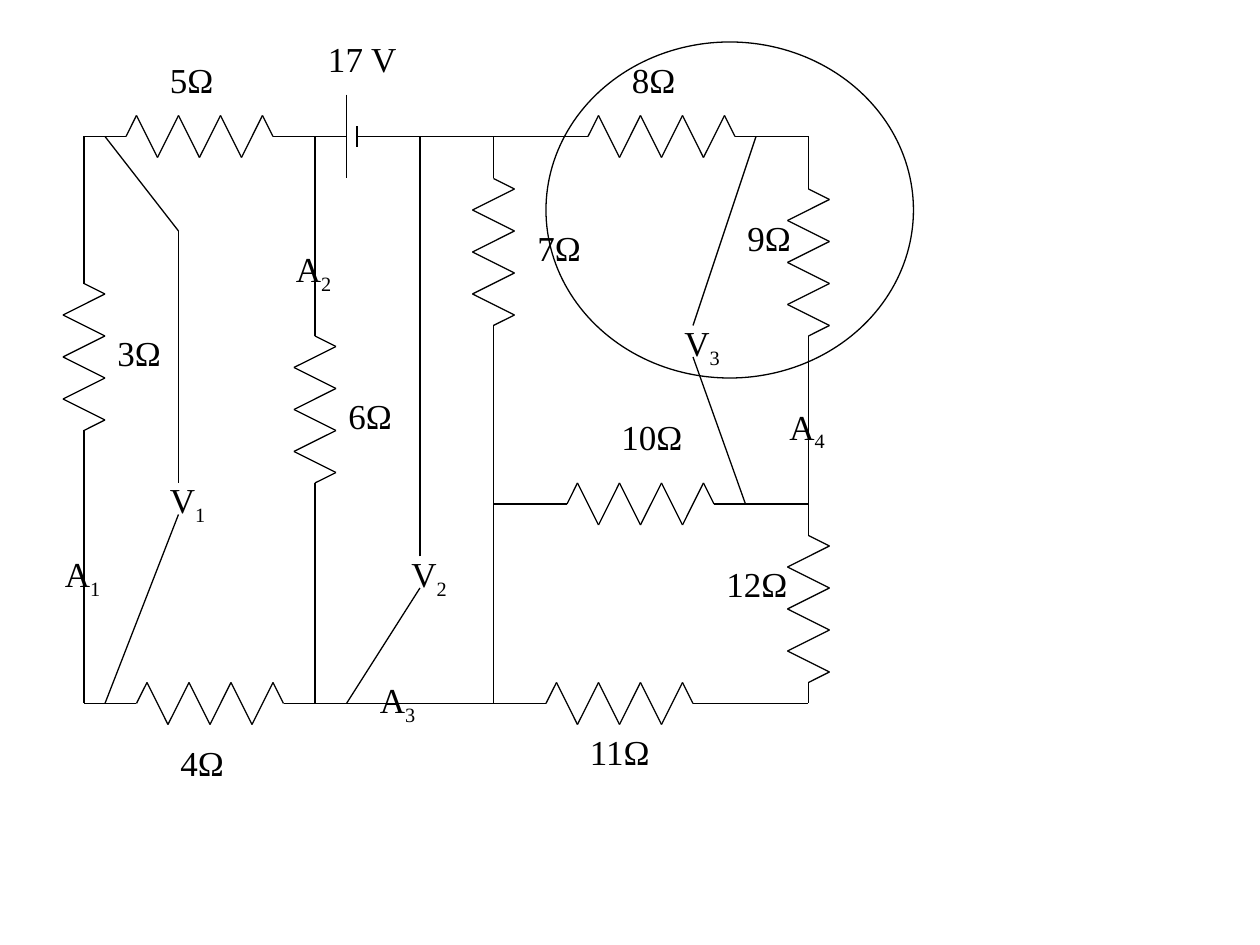
from itertools import pairwise
from typing import NamedTuple

from lxml import etree
from pptx import Presentation
from pptx.dml.color import RGBColor
from pptx.enum.shapes import MSO_CONNECTOR, MSO_SHAPE
from pptx.enum.text import MSO_AUTO_SIZE, PP_ALIGN
from pptx.oxml.ns import qn
from pptx.slide import Slide
from pptx.util import Pt

STRAIGHT = MSO_CONNECTOR.STRAIGHT
ELLIPSE = MSO_SHAPE.OVAL
GROW = MSO_AUTO_SIZE.SHAPE_TO_FIT_TEXT
LEFT, CENTER = PP_ALIGN.LEFT, PP_ALIGN.CENTER

EMU_PER_PX = 9525
INK = "000000"
LINE_WIDTH = Pt(0.75)
FONT_FORMAT = {"name": "Times New Roman", "size": Pt(20)}
FRAME_FORMAT = {"word_wrap": False, "auto_size": GROW}
LABEL_HEIGHT = 41
AMPLITUDE = 16
ZIGZAG_STEPS = (0, 8, 24, 40, 56, 72, 88, 104, 112)
ZIGZAG_SIDES = (0, 1, -1, 1, -1, 1, -1, 1, 0)


class Point(NamedTuple):
    x: int
    y: int


class Resistor(NamedTuple):
    start: Point
    vertical: bool = False


class Label(NamedTuple):
    text: str
    x: int
    y: int
    width: int
    subscript: str = ""
    align: PP_ALIGN = LEFT


RESISTORS = [
    Resistor(Point(96, 104)),
    Resistor(Point(104, 536)),
    Resistor(Point(64, 216), vertical=True),
    Resistor(Point(240, 256), vertical=True),
    Resistor(Point(376, 136), vertical=True),
    Resistor(Point(616, 144), vertical=True),
    Resistor(Point(616, 408), vertical=True),
    Resistor(Point(416, 536)),
    Resistor(Point(432, 384)),
    Resistor(Point(448, 104)),
]

BATTERY_PLATES = [
    (Point(264, 72), Point(264, 136)),
    (Point(272, 96), Point(272, 112)),
]

WIRES = [
    (Point(64, 104), Point(96, 104)),
    (Point(208, 104), Point(264, 104)),
    (Point(272, 104), Point(376, 104)),
    (Point(376, 104), Point(448, 104)),
    (Point(560, 104), Point(616, 104)),
    (Point(376, 384), Point(432, 384)),
    (Point(544, 384), Point(616, 384)),
    (Point(64, 536), Point(104, 536)),
    (Point(216, 536), Point(240, 536)),
    (Point(240, 536), Point(416, 536)),
    (Point(528, 536), Point(616, 536)),
    (Point(64, 104), Point(64, 216)),
    (Point(64, 328), Point(64, 536)),
    (Point(240, 104), Point(240, 256)),
    (Point(240, 368), Point(240, 536)),
    (Point(376, 104), Point(376, 136)),
    (Point(376, 248), Point(376, 536)),
    (Point(616, 104), Point(616, 144)),
    (Point(616, 256), Point(616, 408)),
    (Point(616, 520), Point(616, 536)),
]

METER_LEADS = [
    (Point(136, 392), Point(80, 536)),
    (Point(136, 368), Point(136, 176)),
    (Point(136, 176), Point(80, 104)),
    (Point(320, 448), Point(264, 536)),
    (Point(320, 424), Point(320, 104)),
    (Point(528, 272), Point(568, 384)),
    (Point(528, 248), Point(576, 104)),
]

LABELS = [
    Label("17 V", 240, 24, 72, align=CENTER),
    Label("5Ω", 120, 40, 53),
    Label("8Ω", 472, 40, 53),
    Label("7Ω", 400, 168, 53),
    Label("3Ω", 80, 248, 53),
    Label("4Ω", 128, 560, 53),
    Label("6Ω", 256, 296, 53),
    Label("10Ω", 464, 312, 66),
    Label("11Ω", 440, 552, 66),
    Label("12Ω", 544, 424, 66),
    Label("9Ω", 560, 160, 53),
    Label("A", 592, 304, 47, "4"),
    Label("A", 280, 512, 47, "3"),
    Label("A", 40, 416, 47, "1"),
    Label("A", 216, 184, 47, "2"),
    Label("V", 120, 360, 47, "1"),
    Label("V", 304, 416, 47, "2"),
    Label("V", 512, 240, 47, "3"),
]


def px(*lengths: int) -> list[int]:
    return [length * EMU_PER_PX for length in lengths]


def color(value: str) -> RGBColor:
    return RGBColor.from_string(value)


def draw_line(page: Slide, start: Point, end: Point) -> None:
    line = page.shapes.add_connector(STRAIGHT, *px(*start, *end))
    line.line.color.rgb = color(INK)
    line.line.width = LINE_WIDTH
    etree.SubElement(line._element.spPr, qn("a:effectLst"))


def draw_resistor(page: Slide, resistor: Resistor) -> None:
    x, y = resistor.start
    corners = [
        Point(x + side * AMPLITUDE, y + step)
        if resistor.vertical
        else Point(x + step, y - side * AMPLITUDE)
        for step, side in zip(ZIGZAG_STEPS, ZIGZAG_SIDES)
    ]
    for start, end in pairwise(corners):
        draw_line(page, start, end)


def draw_label(page: Slide, label: Label) -> None:
    box = page.shapes.add_textbox(*px(label.x, label.y, label.width, LABEL_HEIGHT))
    for name, value in FRAME_FORMAT.items():
        setattr(box.text_frame, name, value)
    para = box.text_frame.paragraphs[0]
    para.alignment = label.align
    for text, baseline in ((label.text, "0"), (label.subscript, "-25000")):
        if not text:
            continue
        span = para.add_run()
        span.text = text
        for name, value in FONT_FORMAT.items():
            setattr(span.font, name, value)
        span.font.color.rgb = color(INK)
        span._r.get_or_add_rPr().set("baseline", baseline)


def draw_loop(page: Slide) -> None:
    loop = page.shapes.add_shape(ELLIPSE, *px(416, 32, 280, 256))
    loop.shadow.inherit = False
    loop.fill.background()
    loop.line.color.rgb = color(INK)
    loop.line.width = LINE_WIDTH


def main() -> None:
    deck = Presentation()
    deck.slide_width, deck.slide_height = px(960, 720)
    page = deck.slides.add_slide(deck.slide_layouts[6])
    for start, end in BATTERY_PLATES + WIRES:
        draw_line(page, start, end)
    for resistor in RESISTORS:
        draw_resistor(page, resistor)
    for label in LABELS:
        draw_label(page, label)
    for start, end in METER_LEADS:
        draw_line(page, start, end)
    draw_loop(page)
    deck.save("out.pptx")


if __name__ == "__main__":
    main()
